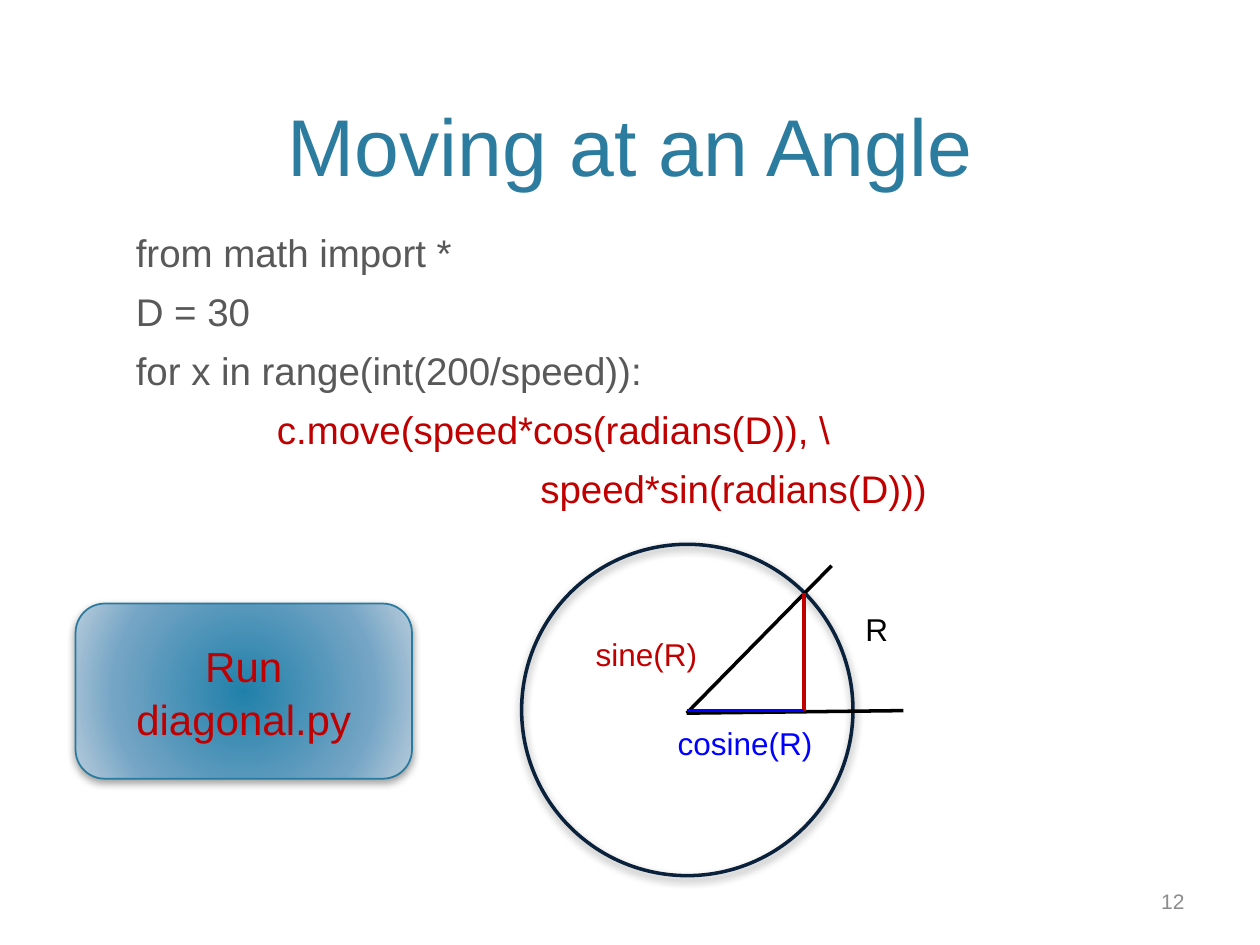
import pptx
import pptx.dml.color
import pptx.enum.shapes
import pptx.enum.text
import pptx.oxml
import pptx.oxml.ns
import pptx.util

Inches = pptx.util.Inches
Pt = pptx.util.Pt
RGB = pptx.dml.color.RGBColor.from_string
Shape = pptx.enum.shapes.MSO_SHAPE
Align = pptx.enum.text.PP_ALIGN
Anchor = pptx.enum.text.MSO_ANCHOR

THEME = {
    "font": "Arial",
    "title": "2C7C9F", "code": "595959", "number": "8C8C8C",
    "red": "C00000", "blue": "0000FF", "black": "000000",
    "circle": "09213B", "button_line": "287A9E",
    "button_stops": [(0, "2180AA"), (69, "75A5C5"), (100, "B8CCDC")],
    "title_size": 46, "code_size": 22, "button_size": 24,
    "label_size": 18, "number_size": 12,
}
NAMESPACE = pptx.oxml.ns.nsdecls("a")
SHADOW = (
    f'<a:effectLst {NAMESPACE}><a:outerShdw blurRad="{Pt(5)}" dist="{Pt(2)}" '
    'dir="5400000" rotWithShape="0"><a:srgbClr val="000000">'
    '<a:alpha val="40000"/></a:srgbClr></a:outerShdw></a:effectLst>'
)


def write(box, lines, size, frame_format=None, paragraph_format=None):
    frame = box.text_frame
    for name, value in {"word_wrap": True, **(frame_format or {})}.items():
        setattr(frame, name, value)
    for index, (text, color) in enumerate(lines):
        para = frame.add_paragraph() if index else frame.paragraphs[0]
        for name, value in (paragraph_format or {}).items():
            setattr(para, name, value)
        span = para.add_run()
        span.text = text
        for name, value in {"name": THEME["font"], "size": Pt(THEME[size])}.items():
            setattr(span.font, name, value)
        span.font.color.rgb = RGB(THEME[color])
    return frame


def outline(item, color, width):
    item.line.color.rgb = RGB(THEME[color])
    item.line.width = Pt(width)


deck = pptx.Presentation()
deck.slide_width, deck.slide_height = Inches(10), Inches(7.5)
page = deck.slides.add_slide(deck.slide_layouts[6])

title = page.shapes.add_textbox(Inches(0.6), Inches(0.12), Inches(8.8), Inches(1.46))
write(title, [("Moving at an Angle", "title")], "title_size",
      {"vertical_anchor": Anchor.BOTTOM}, {"alignment": Align.CENTER})

code_lines = [
    (0.38, "from math import *", "code"),
    (0.38, "D = 30", "code"),
    (0.38, "for x in range(int(200/speed)):", "code"),
    (1.5, "c.move(speed*cos(radians(D)), \\", "red"),
    (3.59, "speed*sin(radians(D)))", "red"),
]
code = page.shapes.add_textbox(Inches(0.6), Inches(1.75), Inches(8.8), Inches(4.75))
frame = write(code, [(text, color) for indent, text, color in code_lines], "code_size",
              None, {"space_before": Pt(6), "line_spacing": 1.05})
for para, (indent, text, color) in zip(frame.paragraphs, code_lines):
    properties = para._p.get_or_add_pPr()
    properties.set("marL", str(Inches(indent)))
    properties.set("indent", "0")

number = page.shapes.add_textbox(Inches(7.17), Inches(6.95), Inches(2.33), Inches(0.4))
write(number, [("12", "number")], "number_size",
      {"vertical_anchor": Anchor.MIDDLE}, {"alignment": Align.RIGHT})

circle = page.shapes.add_shape(Shape.OVAL, Inches(4.14), Inches(4.32), Inches(2.63), Inches(2.63))
circle.fill.background()
outline(circle, "circle", 2)
circle._element.spPr.append(pptx.oxml.parse_xml(SHADOW))

for start_x, start_y, end_x, end_y, color in [
    (7.17, 5.64, 5.45, 5.66, "black"),
    (5.45, 5.66, 6.6, 4.49, "black"),
    (6.38, 4.71, 6.38, 5.64, "red"),
    (5.45, 5.64, 6.38, 5.64, "blue"),
]:
    side = page.shapes.add_connector(
        pptx.enum.shapes.MSO_CONNECTOR.STRAIGHT,
        Inches(start_x), Inches(start_y), Inches(end_x), Inches(end_y))
    outline(side, color, 2)
    side._element.spPr.append(pptx.oxml.parse_xml(f"<a:effectLst {NAMESPACE}/>"))

for left, top, width, text, color in [
    (4.63, 4.99, 1.04, "sine(R)", "red"),
    (5.28, 5.7, 1.31, "cosine(R)", "blue"),
    (6.77, 4.79, 0.37, "R", "black"),
]:
    label = page.shapes.add_textbox(Inches(left), Inches(top), Inches(width), Inches(0.4))
    write(label, [(text, color)], "label_size",
          {"word_wrap": False, "auto_size": pptx.enum.text.MSO_AUTO_SIZE.SHAPE_TO_FIT_TEXT})

button = page.shapes.add_shape(
    Shape.ROUNDED_RECTANGLE, Inches(0.6), Inches(4.79), Inches(2.67), Inches(1.39))
outline(button, "button_line", 1)
stops = "".join(
    f'<a:gs pos="{position * 1000}"><a:srgbClr val="{color}"/></a:gs>'
    for position, color in THEME["button_stops"])
gradient = pptx.oxml.parse_xml(
    f'<a:gradFill {NAMESPACE} rotWithShape="1"><a:gsLst>{stops}</a:gsLst><a:path path="circle">'
    '<a:fillToRect l="50000" t="50000" r="50000" b="50000"/></a:path></a:gradFill>')
button._element.spPr.find(pptx.oxml.ns.qn("a:ln")).addprevious(gradient)
button._element.spPr.append(pptx.oxml.parse_xml(SHADOW))
write(button, [("Run", "red"), ("diagonal.py", "red")], "button_size",
      {"vertical_anchor": Anchor.MIDDLE}, {"alignment": Align.CENTER, "line_spacing": 1.05})

deck.save("out.pptx")
